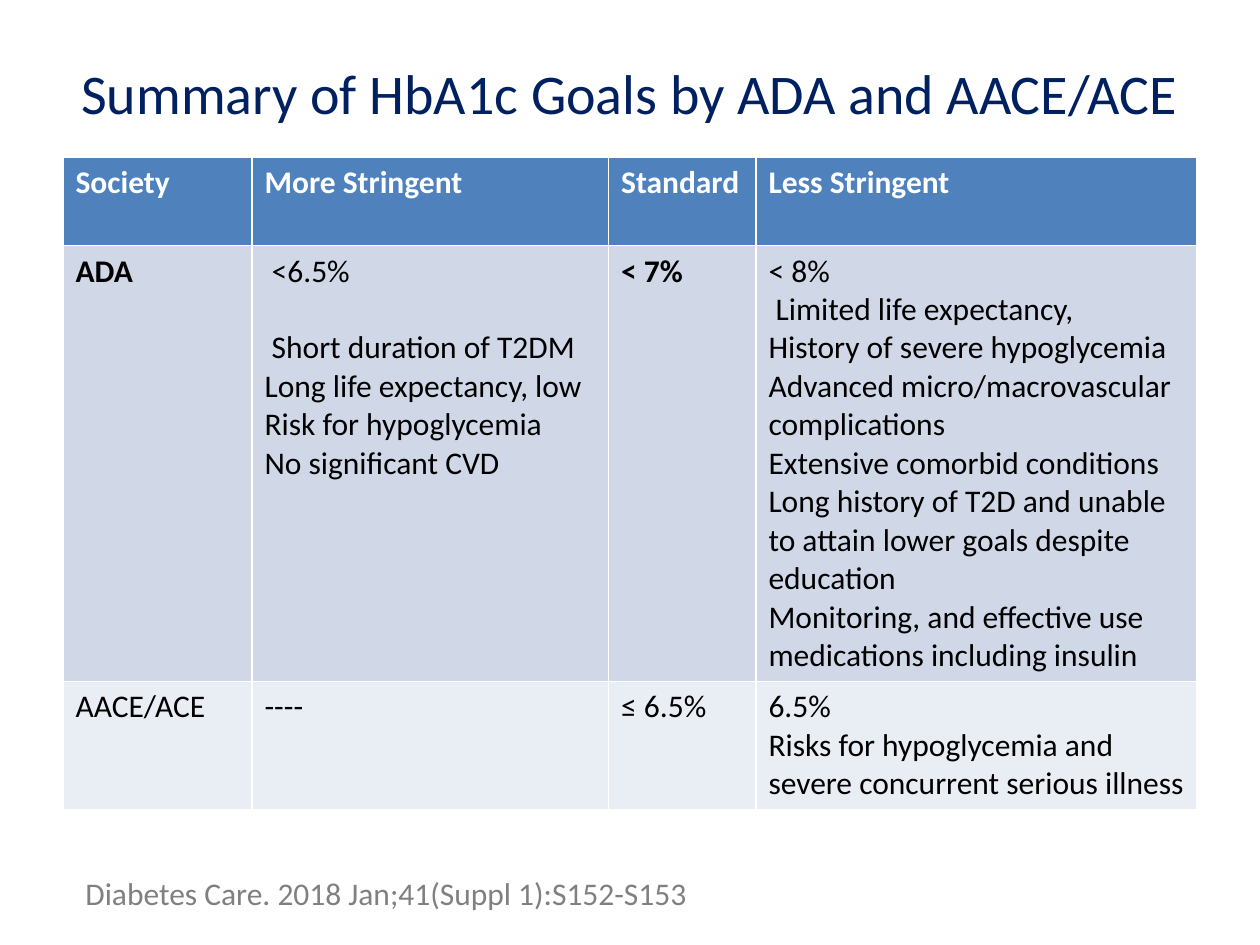
from pptx import Presentation
from pptx import util as u
from pptx.dml import color
from pptx.enum import text

HUES = {"navy": "002060", "head": "4F81BD", "band": "D0D8E8", "pale": "E9EDF4",
        "white": "FFFFFF", "black": "000000", "gray": "808080"}


class Deck:
    """Holds the style and the current slide."""

    def __init__(self, font="Calibri", size=18):
        self.font, self.size = font, size
        self.prs = Presentation()
        self.prs.slide_width, self.prs.slide_height = u.Inches(10), u.Inches(7.5)
        self.slide = self.prs.slides.add_slide(self.prs.slide_layouts[5])

    def hue(self, name):
        return color.RGBColor.from_string(HUES[name])

    def style(self, frame, hue, size=None, bold=False):
        for para in frame.paragraphs:
            for run in para.runs:
                run.font.name = self.font
                run.font.size = u.Pt(size or self.size)
                run.font.bold = bold
                run.font.color.rgb = self.hue(hue)

    def title(self, words, box):
        shape = self.slide.shapes.title
        shape.left, shape.top, shape.width, shape.height = map(u.Inches, box)
        frame = shape.text_frame
        frame.text = words
        frame.vertical_anchor = text.MSO_ANCHOR.MIDDLE
        frame.paragraphs[0].alignment = text.PP_ALIGN.CENTER
        self.style(frame, "navy", 32)

    def label(self, words, box, hue):
        frame = self.slide.shapes.add_textbox(*map(u.Inches, box)).text_frame
        frame.word_wrap = True
        frame.vertical_anchor = text.MSO_ANCHOR.MIDDLE
        frame.text = words
        self.style(frame, hue)

    def table(self, rows, left, top, widths, heights, fills, bolds):
        box = map(u.Inches, (left, top, sum(widths), sum(heights)))
        grid = self.slide.shapes.add_table(len(rows), len(widths), *box).table
        for col, width in zip(grid.columns, widths):
            col.width = u.Inches(width)
        for r, row in enumerate(rows):
            grid.rows[r].height = u.Inches(heights[r])
            for c, words in enumerate(row):
                cell = grid.cell(r, c)
                cell.text_frame.text = words
                cell.fill.solid()
                cell.fill.fore_color.rgb = self.hue(fills[r])
                self.style(cell.text_frame, "black" if r else "white",
                           bold=r == 0 or (r, c) in bolds)
        return grid


def main():
    deck = Deck()
    deck.title("Summary of HbA1c Goals by ADA and AACE/ACE", (0.5, 0.3, 9, 0.87))
    rows = [
        ["Society", "More Stringent", "Standard", "Less Stringent"],
        ["ADA",
         " <6.5%\n Short duration of T2DM\n"
         "Long life expectancy, low Risk for hypoglycemia\nNo significant CVD",
         "< 7%",
         "< 8%\n Limited life expectancy,\n"
         "History of severe hypoglycemia Advanced micro/macrovascular complications\n"
         "Extensive comorbid conditions Long history of T2D and unable to attain "
         "lower goals despite education\n"
         "Monitoring, and effective use medications including insulin"],
        ["AACE/ACE", "----", "≤ 6.5%",
         "6.5%\nRisks for hypoglycemia and severe concurrent serious illness"],
    ]
    grid = deck.table(rows, 0.5, 1.25, (1.5, 2.83, 1.17, 3.5), (0.7, 3.46, 1.01),
                      ("head", "band", "pale"), {(1, 0), (1, 2)})
    grid.cell(1, 1).text_frame.paragraphs[1].space_before = u.Pt(22)
    deck.label("Diabetes Care. 2018 Jan;41(Suppl 1):S152-S153",
               (0.58, 6.92, 6.17, 0.33), "gray")
    deck.prs.save("out.pptx")


if __name__ == "__main__":
    main()
